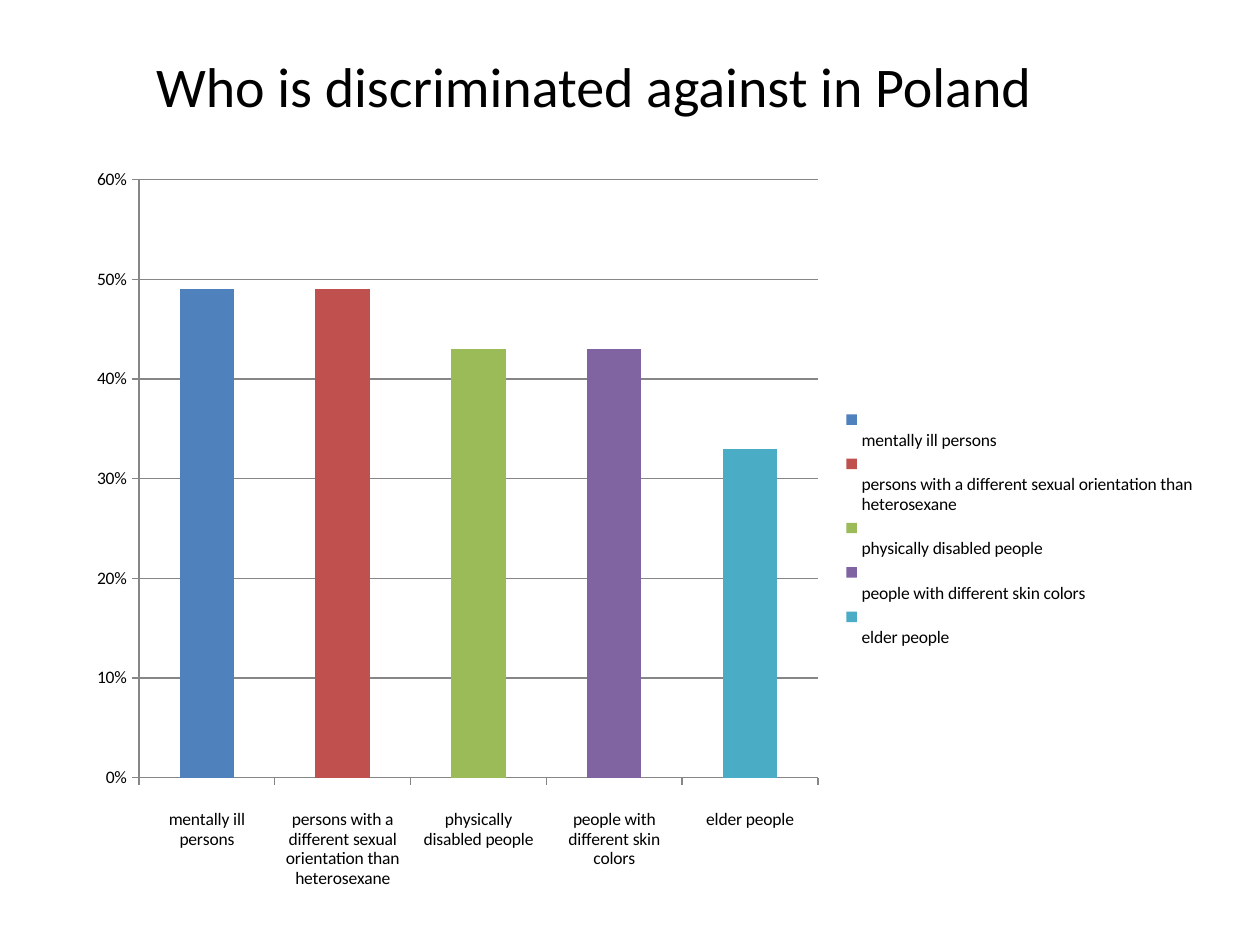
import pptx
import pptx.chart.data
import pptx.dml.color
import pptx.enum.chart
import pptx.util

Inches, Pt = pptx.util.Inches, pptx.util.Pt
RGBColor = pptx.dml.color.RGBColor

BLACK = RGBColor(0x00, 0x00, 0x00)
GREY = RGBColor(0x86, 0x86, 0x86)
BLUE = RGBColor(0x4F, 0x81, 0xBD)
RED = RGBColor(0xC0, 0x50, 0x4D)
GREEN = RGBColor(0x9B, 0xBB, 0x59)
PURPLE = RGBColor(0x80, 0x64, 0xA2)
AQUA = RGBColor(0x4B, 0xAC, 0xC6)

GROUPS = [
    ("mentally ill persons", 0.49, BLUE),
    ("persons with a different sexual orientation than heterosexane", 0.49, RED),
    ("physically disabled people", 0.43, GREEN),
    ("people with different skin colors", 0.43, PURPLE),
    ("elder people", 0.33, AQUA),
]

presentation = pptx.Presentation()
presentation.slide_width = Inches(10)
presentation.slide_height = Inches(7.5)
slide = presentation.slides.add_slide(presentation.slide_layouts[6])

# Share of respondents naming each group
survey = pptx.chart.data.CategoryChartData(number_format="0%")
# Each label starts on a second line, below its legend key
survey.categories = ["\n" + group for group, share, color in GROUPS]
survey.add_series("Series 1", [share for group, share, color in GROUPS])
chart = slide.shapes.add_chart(
    pptx.enum.chart.XL_CHART_TYPE.COLUMN_CLUSTERED,
    Inches(0.59), Inches(1.23), Inches(9), Inches(5.94), survey,
).chart
chart.has_title = False
chart.font.name = "Calibri"
chart.font.size = Pt(10)
chart.font.color.rgb = BLACK

chart.has_legend = True
chart.legend.position = pptx.enum.chart.XL_LEGEND_POSITION.RIGHT
chart.legend.include_in_layout = False

columns = chart.plots[0]
columns.gap_width = 150
columns.vary_by_categories = True
for index, (group, share, color) in enumerate(GROUPS):
    fill = columns.series[0].points[index].format.fill
    fill.solid()
    fill.fore_color.rgb = color

share_axis = chart.value_axis
share_axis.minimum_scale = 0
share_axis.maximum_scale = 0.6
share_axis.major_unit = 0.1
share_axis.has_major_gridlines = True
share_axis.tick_labels.number_format = "0%"
share_axis.tick_labels.number_format_is_linked = False
for axis in (chart.category_axis, share_axis):
    axis.major_tick_mark = pptx.enum.chart.XL_TICK_MARK.OUTSIDE
for ruled in (chart.category_axis, share_axis, share_axis.major_gridlines):
    ruled.format.line.color.rgb = GREY
    ruled.format.line.width = Pt(0.75)

# Title
title = slide.shapes.add_textbox(Inches(1.14), Inches(0.36), Inches(7.87), Inches(0.64))
title.text_frame.word_wrap = True
title.text_frame.text = "Who is discriminated against in Poland"
title_font = title.text_frame.paragraphs[0].runs[0].font
title_font.name = "Calibri"
title_font.size = Pt(32)
title_font.color.rgb = BLACK

presentation.save("out.pptx")
